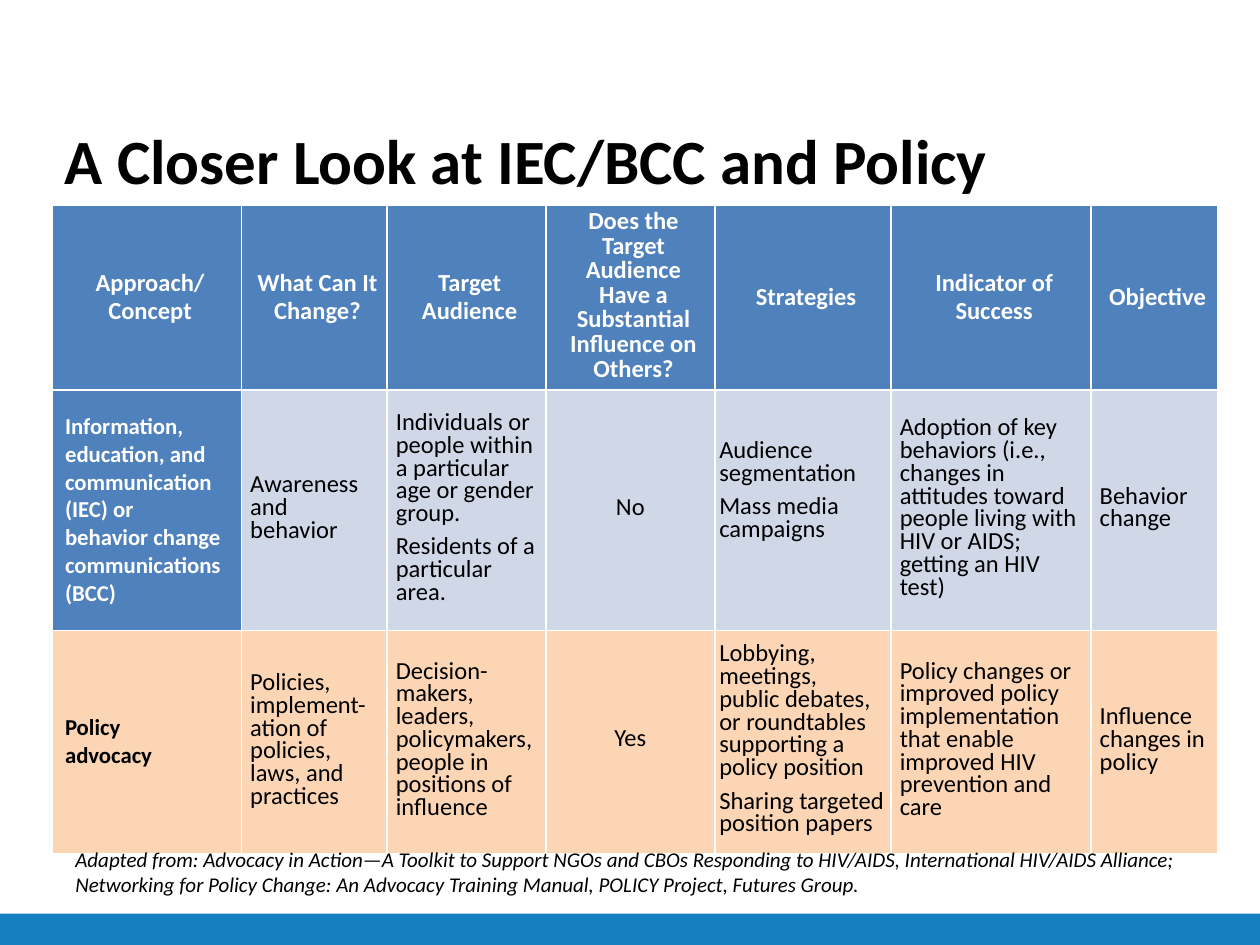
from lxml.etree import SubElement
from pptx import Presentation
from pptx.dml.color import RGBColor
from pptx.enum.shapes import MSO_SHAPE
from pptx.enum.text import MSO_ANCHOR as ANCHOR, PP_ALIGN as ALIGN
from pptx.oxml.ns import qn
from pptx.util import Pt

COLORS = {"bar": "137FC1", "header": "4F81BD", "iec": "D0D8E8",
          "policy": "FCD5B5", "white": "FFFFFF", "black": "000000"}

COL_WIDTHS = [108, 83.25, 90.75, 96.5, 100.75, 114.25, 72.5]
ROW_HEIGHTS = [105, 137.5, 127.5]

# Each cell is a list of paragraphs
HEADERS = [["Approach/\nConcept"], ["What Can It Change?"], ["Target Audience"],
           ["Does the Target Audience Have a Substantial Influence on Others?"],
           ["Strategies"], ["Indicator of Success"], ["Objective"]]
IEC = [
    ["Information, education, and communication (IEC) or\n"
     "behavior change communications (BCC)"],
    ["Awareness and behavior"],
    ["Individuals or people within a particular age or gender group.",
     "Residents of a particular area."],
    ["No"],
    ["Audience segmentation", "Mass media campaigns"],
    ["Adoption of key behaviors (i.e., changes in attitudes toward people "
     "living with HIV or AIDS; getting an HIV test)"],
    ["Behavior change"],
]
POLICY = [
    ["Policy\nadvocacy"],
    ["Policies, implement-ation of policies, laws, and practices"],
    ["Decision- makers, leaders, policymakers, people in positions of influence"],
    ["Yes"],
    ["Lobbying, meetings,\npublic debates, or roundtables supporting a policy position",
     "Sharing targeted position papers"],
    ["Policy changes or improved policy implementation that enable improved "
     "HIV prevention and care"],
    ["Influence changes in policy"],
]

# Cell formats; insets are left, top, right, bottom
HEAD = {"insets": (7.2, 3.6, 3.6, 3.6), "leading": 16, "align": ALIGN.CENTER,
        "size": 14, "bold": True}
LABEL = {**HEAD, "align": ALIGN.LEFT, "size": 13}
BODY = {"insets": (5, 0.7, 5, 0), "leading": 13, "align": ALIGN.LEFT,
        "size": 14, "bold": False}
TIGHT = {**BODY, "insets": (2.6, 2.6, 2.6, 2.6)}
ANSWER = {**TIGHT, "align": ALIGN.CENTER}
BODY_FORMATS = [LABEL, BODY, BODY, ANSWER, TIGHT, BODY, BODY]


def rgb(name):
    return RGBColor.from_string(COLORS[name])


def set_text(p, text, color, **font):
    p.text = text
    for r in p.runs:
        r.font.name = "Calibri"
        r.font.color.rgb = rgb(color)
        for key, value in font.items():
            setattr(r.font, key, value)


def add_text(slide, box, text, **font):
    tf = slide.shapes.add_textbox(*map(Pt, box)).text_frame
    tf.word_wrap = True
    tf.vertical_anchor = ANCHOR.TOP
    set_text(tf.paragraphs[0], text, "black", **font)


def set_borders(cell):
    tc_pr = cell._tc.get_or_add_tcPr()
    for i, side in enumerate(("lnL", "lnR", "lnT", "lnB")):
        ln = SubElement(tc_pr, qn(f"a:{side}"), w=str(Pt(1)))
        tc_pr.remove(ln)
        tc_pr.insert(i, ln)
        fill = SubElement(ln, qn("a:solidFill"))
        SubElement(fill, qn("a:srgbClr"), val=COLORS["white"])


def fill_cell(cell, texts, fmt, fill, color):
    cell.fill.solid()
    cell.fill.fore_color.rgb = rgb(fill)
    set_borders(cell)
    cell.vertical_anchor = ANCHOR.MIDDLE
    for side, inset in zip(("left", "top", "right", "bottom"), fmt["insets"]):
        setattr(cell, f"margin_{side}", Pt(inset))
    tf = cell.text_frame
    for i, text in enumerate(texts):
        p = tf.add_paragraph() if i else tf.paragraphs[0]
        p.alignment = fmt["align"]
        p.line_spacing = Pt(fmt["leading"])
        last = i == len(texts) - 1
        p.space_after = Pt(0 if last and not fmt["bold"] else 6)
        set_text(p, text, color, size=Pt(fmt["size"]), bold=fmt["bold"])


def add_comparison(slide, box):
    table = slide.shapes.add_table(len(ROW_HEIGHTS), len(COL_WIDTHS), *map(Pt, box)).table
    for col, width in zip(table.columns, COL_WIDTHS):
        col.width = Pt(width)
    for row, height in zip(table.rows, ROW_HEIGHTS):
        row.height = Pt(height)

    # Header row
    for c, texts in enumerate(HEADERS):
        fmt = {**HEAD, "leading": 14} if c == 3 else HEAD
        fill_cell(table.cell(0, c), texts, fmt, "header", "white")

    # One row per approach, with its label in the first column
    rows = [(IEC, "iec", "header", "white"), (POLICY, "policy", "policy", "black")]
    for r, (cells, fill, label_fill, label_color) in enumerate(rows, 1):
        for c, (texts, fmt) in enumerate(zip(cells, BODY_FORMATS)):
            look = (fill, "black") if c else (label_fill, label_color)
            fill_cell(table.cell(r, c), texts, fmt, *look)

    # The IEC strategies sit above the middle of their cell
    table.cell(1, 4).margin_bottom = Pt(22)


def add_footer_bar(slide, box):
    sp = slide.shapes.add_shape(MSO_SHAPE.RECTANGLE, *map(Pt, box))
    sp.shadow.inherit = False
    sp.fill.solid()
    sp.fill.fore_color.rgb = rgb("bar")
    sp.line.fill.background()


def main():
    prs = Presentation()
    prs.slide_width, prs.slide_height = Pt(720), Pt(540)
    slide = prs.slides.add_slide(prs.slide_layouts[6])

    add_footer_bar(slide, (0, 522, 720, 18))
    add_text(slide, (30, 66, 666, 52), "A Closer Look at IEC/BCC and Policy",
             size=Pt(36), bold=True)
    add_comparison(slide, (30, 117.5, sum(COL_WIDTHS), sum(ROW_HEIGHTS)))
    add_text(slide, (36, 480, 648, 36),
             "Adapted from: Advocacy in Action—A Toolkit to Support NGOs and CBOs "
             "Responding to HIV/AIDS, International HIV/AIDS Alliance; Networking for "
             "Policy Change: An Advocacy Training Manual, POLICY Project, Futures Group.",
             size=Pt(12), italic=True)
    prs.save("out.pptx")


if __name__ == "__main__":
    main()
